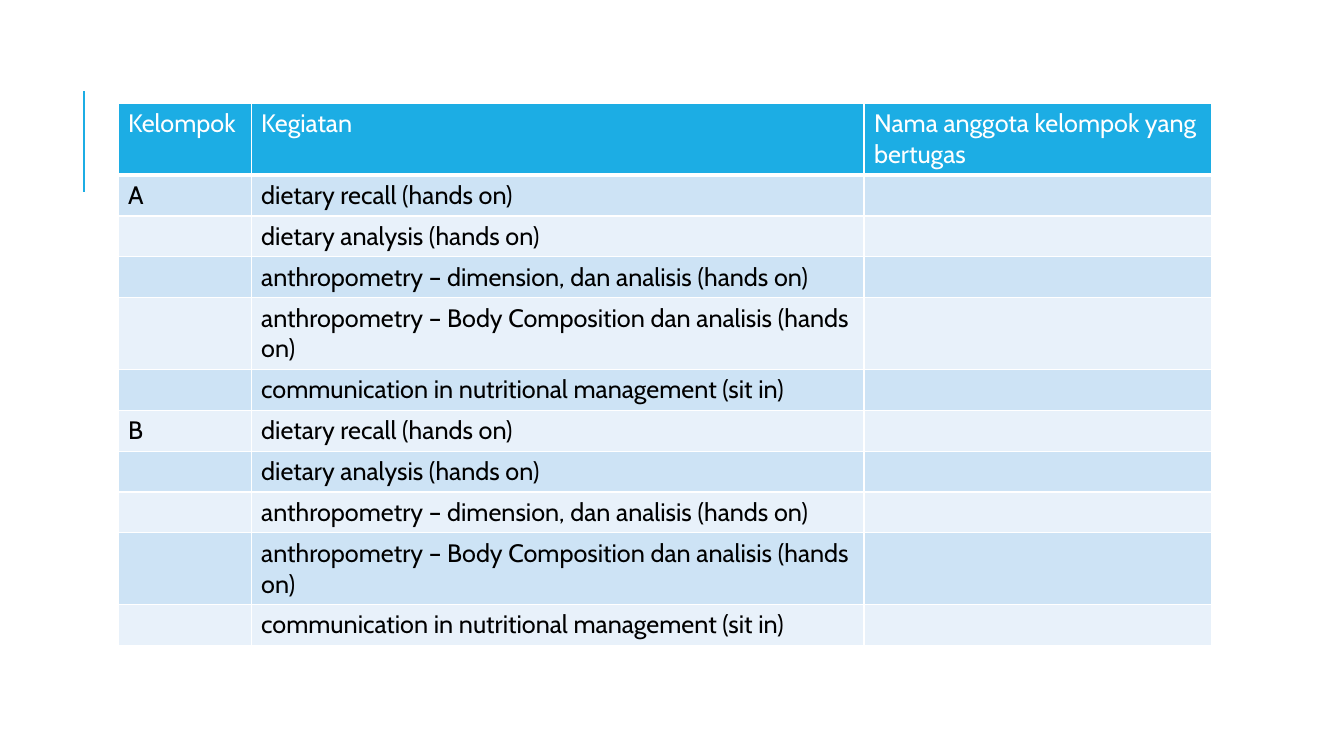
from dataclasses import dataclass

from lxml.etree import SubElement
from pptx import Presentation
from pptx.dml.color import RGBColor as RGB
from pptx.enum.shapes import MSO_CONNECTOR as LineKind
from pptx.oxml.ns import qn
from pptx.slide import Slide
from pptx.table import _Cell as Cell
from pptx.util import Pt

FONT = "Cabin"
BLUE, WHITE, BLACK = "1CADE4", "FFFFFF", "000000"
BANDS = ("CDE3F5", "E8F1FA")

HEADS = ("Kelompok", "Kegiatan", "Nama anggota kelompok yang bertugas")
GROUPS = ("A", "B")
TASKS = (
    "dietary recall (hands on)",
    "dietary analysis (hands on)",
    "anthropometry – dimension, dan analisis (hands on)",
    "anthropometry – Body Composition dan analisis (hands on)",
    "communication in nutritional management (sit in)",
)
LEFT, TOP = 84.3, 73.9
WIDTHS = (95.1, 437.8, 248.4)
ROW = 29.2


@dataclass
class Line:
    texts: tuple[str, ...]
    fill: str
    ink: str = BLACK
    base: float = 1


def color(code: str) -> RGB:
    return RGB.from_string(code)


def plan() -> list[Line]:
    """List the header row, then every group's tasks in banded rows."""
    rows = [Line(HEADS, BLUE, WHITE, 3)]
    for group in GROUPS:
        for i, task in enumerate(TASKS):
            name = group if i == 0 else ""
            rows.append(Line((name, task, ""), BANDS[(len(rows) - 1) % 2]))
    return rows


def add_edges(cell: Cell, base: float) -> None:
    props = cell._tc.get_or_add_tcPr()
    for side, width in (("L", 1), ("R", 1), ("T", 1), ("B", base)):
        edge = SubElement(props, qn(f"a:ln{side}"), w=str(Pt(width)))
        fill = SubElement(edge, qn("a:solidFill"))
        SubElement(fill, qn("a:srgbClr"), val=WHITE)


def fill_cell(cell: Cell, text: str, line: Line) -> None:
    add_edges(cell, line.base)
    cell.fill.solid()
    cell.fill.fore_color.rgb = color(line.fill)
    if not text:
        return
    cell.text_frame.text = text
    font = cell.text_frame.paragraphs[0].runs[0].font
    font.name, font.size, font.bold = FONT, Pt(18), False
    font.color.rgb = color(line.ink)


def add_grid(slide: Slide, lines: list[Line]) -> None:
    frame = slide.shapes.add_table(
        len(lines), len(WIDTHS), Pt(LEFT), Pt(TOP),
        Pt(sum(WIDTHS)), Pt(ROW * len(lines)))
    grid = frame.table
    for col, width in zip(grid.columns, WIDTHS):
        col.width = Pt(width)
    for row, line in zip(grid.rows, lines):
        row.height = Pt(ROW)
        for cell, text in zip(row.cells, line.texts):
            fill_cell(cell, text, line)


def add_accent(slide: Slide) -> None:
    rule = slide.shapes.add_connector(
        LineKind.STRAIGHT, Pt(60), Pt(136.8), Pt(60), Pt(64.8))
    rule.line.color.rgb = color(BLUE)
    rule.line.width = Pt(1.5)
    SubElement(rule._element.spPr, qn("a:effectLst"))


def main() -> None:
    deck = Presentation()
    deck.slide_width, deck.slide_height = Pt(960), Pt(540)
    slide = deck.slides.add_slide(deck.slide_layouts[6])
    add_accent(slide)
    add_grid(slide, plan())
    deck.save("out.pptx")


if __name__ == "__main__":
    main()
